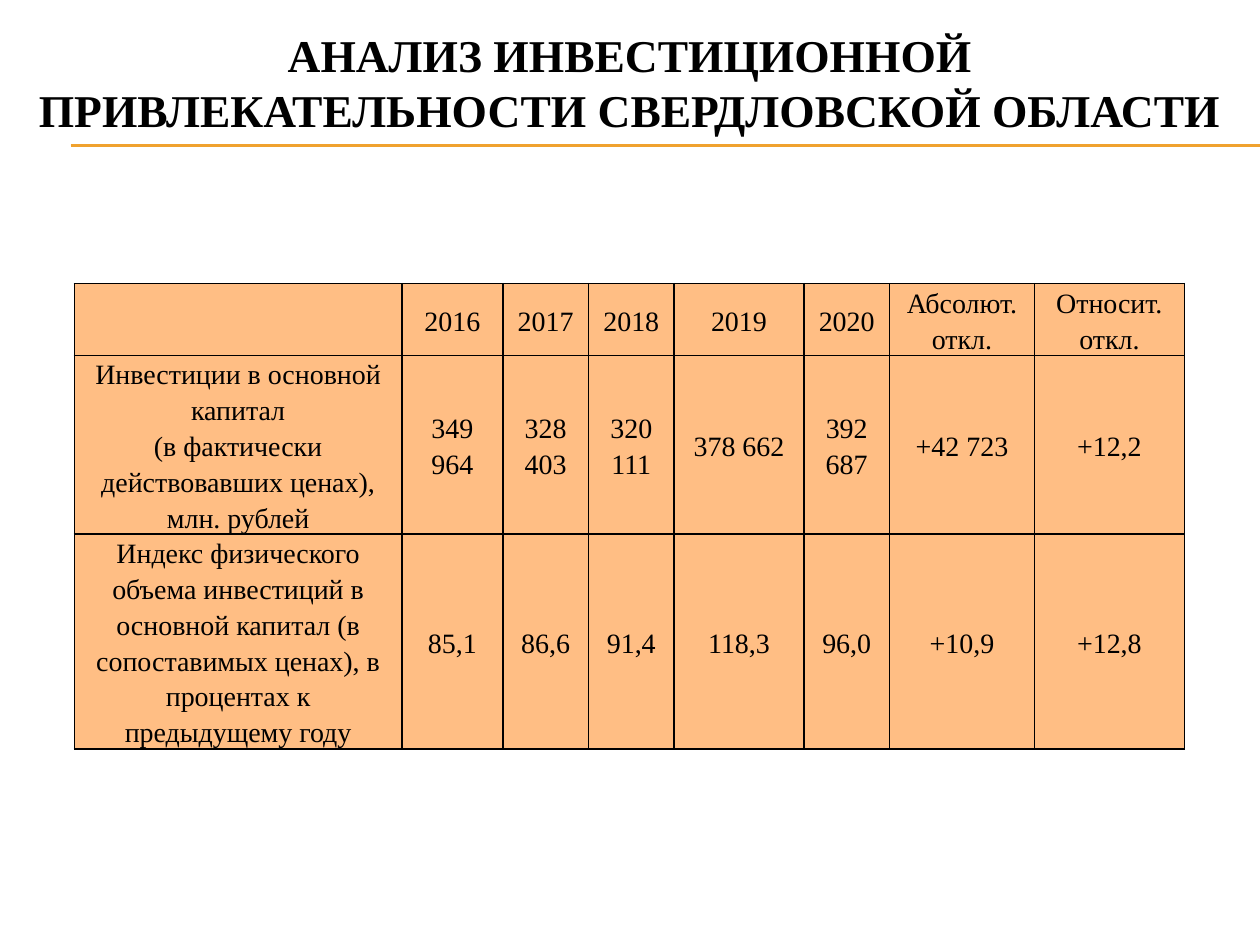
import dataclasses

import lxml.etree
import pptx
import pptx.dml.color
import pptx.enum.shapes
import pptx.enum.text
import pptx.oxml.ns
import pptx.util

Inches = pptx.util.Inches
MIDDLE = pptx.enum.text.MSO_ANCHOR.MIDDLE


@dataclasses.dataclass(frozen=True)
class Theme:
    font: str = "Times New Roman"
    ink: str = "000000"
    rule: str = "F0A22E"
    fill: str = "FFBE84"
    head: int = 26
    body: int = 16


def color(code):
    return pptx.dml.color.RGBColor.from_string(code)


def add(parent, tag, **attrs):
    return lxml.etree.SubElement(parent, pptx.oxml.ns.qn(tag), attrs)


def write(frame, text, *, font, size, ink, bold=False, space=None):
    frame.text = text
    for para in frame.paragraphs:
        para.alignment = pptx.enum.text.PP_ALIGN.CENTER
        para.line_spacing = space
        para.font.name = font
        para.font.size = pptx.util.Pt(size)
        para.font.bold = bold
        para.font.color.rgb = color(ink)


class Deck:
    """Hold the theme and the current slide, and add elements to it."""

    def __init__(self, theme):
        self.theme = theme
        self.file = pptx.Presentation()
        self.file.slide_width, self.file.slide_height = Inches(10), Inches(7.5)
        self.slide = self.file.slides.add_slide(self.file.slide_layouts[5])

    def title(self, text, left, top, width, height):
        shape = self.slide.shapes.title
        shape.left, shape.top = Inches(left), Inches(top)
        shape.width, shape.height = Inches(width), Inches(height)
        frame = shape.text_frame
        frame.word_wrap = True
        frame.auto_size = pptx.enum.text.MSO_AUTO_SIZE.NONE
        frame.vertical_anchor = MIDDLE
        write(frame, text, font=self.theme.font, size=self.theme.head,
              ink=self.theme.ink, bold=True)

    def rule(self, left, right, top):
        line = self.slide.shapes.add_connector(
            pptx.enum.shapes.MSO_CONNECTOR.STRAIGHT,
            Inches(left), Inches(top), Inches(right), Inches(top))
        line.line.color.rgb = color(self.theme.rule)
        line.line.width = pptx.util.Pt(0.75)
        add(line._element.spPr, "a:effectLst")

    def border(self, cell):
        props = cell._tc.get_or_add_tcPr()
        for side in ("L", "R", "T", "B"):
            edge = add(props, f"a:ln{side}", w=str(pptx.util.Pt(1)))
            add(add(edge, "a:solidFill"), "a:srgbClr", val=self.theme.ink)

    def cell(self, cell, text):
        cell.margin_left = cell.margin_right = Inches(0.07)
        cell.margin_top = cell.margin_bottom = 0
        cell.vertical_anchor = MIDDLE
        self.border(cell)
        cell.fill.solid()
        cell.fill.fore_color.rgb = color(self.theme.fill)
        write(cell.text_frame, text, font=self.theme.font,
              size=self.theme.body, ink=self.theme.ink, space=1.15)

    def table(self, data, left, top, widths, heights):
        table = self.slide.shapes.add_table(
            len(heights), len(widths), Inches(left), Inches(top),
            Inches(sum(widths)), Inches(sum(heights))).table
        for col, width in zip(table.columns, widths):
            col.width = Inches(width)
        for row, height, texts in zip(table.rows, heights, data):
            row.height = Inches(height)
            for cell, text in zip(row.cells, texts):
                self.cell(cell, text)


DATA = [
    ["", "2016", "2017", "2018", "2019", "2020",
     "Абсолют. откл.", "Относит. откл."],
    ["Инвестиции в основной капитал\n"
     "(в фактически действовавших ценах), млн. рублей",
     "349 964", "328 403", "320 111", "378 662", "392 687",
     "+42 723", "+12,2"],
    ["Индекс физического объема инвестиций в основной капитал "
     "(в сопоставимых ценах), в процентах к предыдущему году",
     "85,1", "86,6", "91,4", "118,3", "96,0", "+10,9", "+12,8"],
]


def main():
    deck = Deck(Theme())
    for top in (1.15, 1.16):
        deck.rule(0.56, 10, top)
    deck.title("АНАЛИЗ ИНВЕСТИЦИОННОЙ ПРИВЛЕКАТЕЛЬНОСТИ "
               "СВЕРДЛОВСКОЙ ОБЛАСТИ", 0, 0.29, 10, 0.72)
    deck.table(DATA, 0.59, 2.25,
               [2.6, 0.8, 0.68, 0.68, 1.03, 0.68, 1.15, 1.19],
               [0.57, 1.42, 1.7])
    deck.file.save("out.pptx")


if __name__ == "__main__":
    main()
